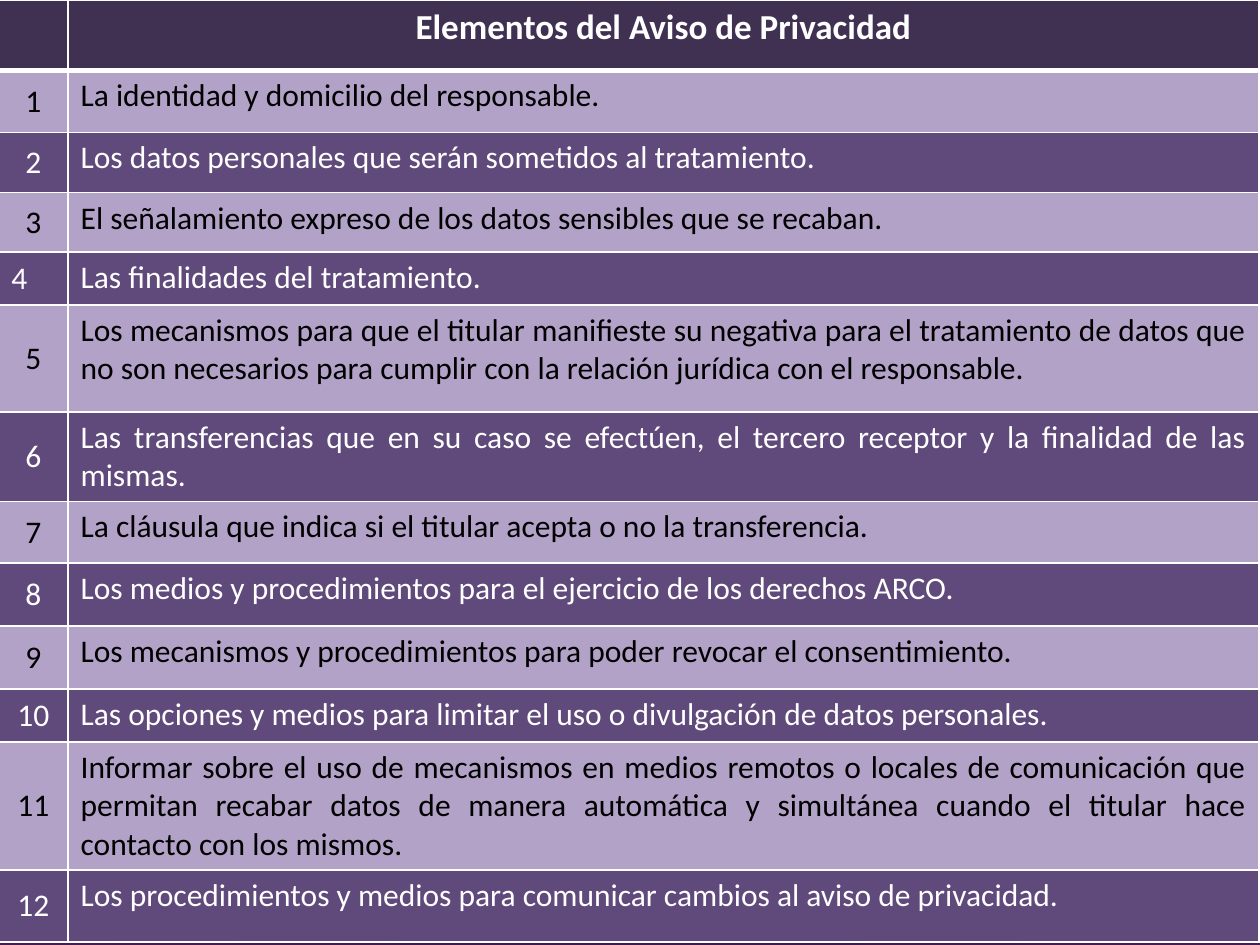
from lxml.etree import SubElement
from pptx import Presentation
from pptx.dml.color import RGBColor
from pptx.enum.text import MSO_ANCHOR as Anchor, PP_ALIGN as Align
from pptx.oxml.ns import qn
from pptx.util import Inches, Pt

WHITE = RGBColor(0xFF, 0xFF, 0xFF)
BLACK = RGBColor(0, 0, 0)
HEADER_PURPLE = RGBColor(0x40, 0x31, 0x52)
LIGHT_PURPLE = RGBColor(0xB3, 0xA2, 0xC7)
DARK_PURPLE = RGBColor(0x60, 0x4A, 0x7B)
BACKGROUND_CENTER = RGBColor(0x34, 0x16, 0x4A)
BACKGROUND_EDGE = RGBColor(0x46, 0x1D, 0x53)

HEADING = "Elementos del Aviso de Privacidad"
HEADER_HEIGHT = 0.56
COLUMN_WIDTHS = (0.55, 9.45)
# Row height in inches, text
ELEMENTS = [
    (0.49, "La identidad y domicilio del responsable."),
    (0.48, "Los datos personales que serán sometidos al tratamiento."),
    (0.47, "El señalamiento expreso de los datos sensibles que se recaban."),
    (0.42, "Las finalidades del tratamiento."),
    (0.85, "Los mecanismos para que el titular manifieste su negativa para el "
           "tratamiento de datos que no son necesarios para cumplir con la "
           "relación jurídica con el responsable."),
    (0.6, "Las transferencias que en su caso se efectúen, el tercero receptor "
          "y la finalidad de las mismas."),
    (0.49, "La cláusula que indica si el titular acepta o no la transferencia."),
    (0.5, "Los medios y procedimientos para el ejercicio de los derechos ARCO."),
    (0.5, "Los mecanismos y procedimientos para poder revocar el consentimiento."),
    (0.42, "Las opciones y medios para limitar el uso o divulgación de datos "
           "personales."),
    (0.85, "Informar sobre el uso de mecanismos en medios remotos o locales de "
           "comunicación que permitan recabar datos de manera automática y "
           "simultánea cuando el titular hace contacto con los mismos."),
    (0.57, "Los procedimientos y medios para comunicar cambios al aviso de "
           "privacidad."),
]
JUSTIFIED_NUMBER = 4
SPACED_NUMBERS = (5, 11)

HEADER_FONT = {"name": "Calibri", "size": Pt(20), "bold": True}
BODY_FONT = {"name": "Calibri", "size": Pt(18), "bold": False}


def paint_background(slide):
    """Fill the background with a radial gradient."""
    fill = slide.background.fill
    fill.gradient()
    for stop, color in zip(fill.gradient_stops, (BACKGROUND_CENTER, BACKGROUND_EDGE)):
        stop.color.rgb = color
    gradient = slide.element.find(".//" + qn("a:gradFill"))
    gradient.remove(gradient.find(qn("a:lin")))
    circle = SubElement(gradient, qn("a:path"), path="circle")
    SubElement(circle, qn("a:fillToRect"), dict.fromkeys("ltrb", "50000"))


def set_borders(cell, top=1, bottom=1):
    """Draw white cell borders; top and bottom are widths in points."""
    properties = cell._tc.get_or_add_tcPr()
    for side, width in {"L": 1, "R": 1, "T": top, "B": bottom}.items():
        line = SubElement(properties, qn(f"a:ln{side}"), w=str(Pt(width)))
        solid = SubElement(line, qn("a:solidFill"))
        SubElement(solid, qn("a:srgbClr"), val=str(WHITE))


def fill_cell(cell, text, fill_color, text_color, font, alignment):
    cell.fill.solid()
    cell.fill.fore_color.rgb = fill_color
    paragraph = cell.text_frame.paragraphs[0]
    paragraph.alignment = alignment
    if text:
        run = paragraph.add_run()
        run.text = text
        run.font.color.rgb = text_color
        for name, value in font.items():
            setattr(run.font, name, value)


def fill_header(row):
    row.height = Inches(HEADER_HEIGHT)
    for cell, text in zip(row.cells, ("", HEADING)):
        set_borders(cell, bottom=3)
        fill_cell(cell, text, HEADER_PURPLE, WHITE, HEADER_FONT, Align.CENTER)


def fill_element(row, number, height, text):
    row.height = Inches(height)
    odd = number % 2 == 1
    fill_color, text_color = (LIGHT_PURPLE, BLACK) if odd else (DARK_PURPLE, WHITE)
    number_alignment = Align.JUSTIFY if number == JUSTIFIED_NUMBER else Align.CENTER
    contents = ((str(number), number_alignment), (text, Align.JUSTIFY))
    for cell, (content, alignment) in zip(row.cells, contents):
        set_borders(cell, top=3 if number == 1 else 1)
        fill_cell(cell, content, fill_color, text_color, BODY_FONT, alignment)
        if number in SPACED_NUMBERS:
            cell.text_frame.paragraphs[0].space_after = Pt(1)
    row.cells[0].vertical_anchor = Anchor.MIDDLE


def add_elements_table(slide, left, top, width, height):
    table = slide.shapes.add_table(len(ELEMENTS) + 1, len(COLUMN_WIDTHS),
                                   left, top, width, height).table
    for column, column_width in zip(table.columns, COLUMN_WIDTHS):
        column.width = Inches(column_width)
    header, *rows = table.rows
    fill_header(header)
    for number, (row, element) in enumerate(zip(rows, ELEMENTS), start=1):
        fill_element(row, number, *element)


def main():
    presentation = Presentation()
    presentation.slide_width = Inches(10)
    presentation.slide_height = Inches(7.5)
    slide = presentation.slides.add_slide(presentation.slide_layouts[6])
    paint_background(slide)
    add_elements_table(slide, Inches(-0.01), Inches(0), Inches(10), Inches(7.46))
    presentation.save("out.pptx")


if __name__ == "__main__":
    main()
